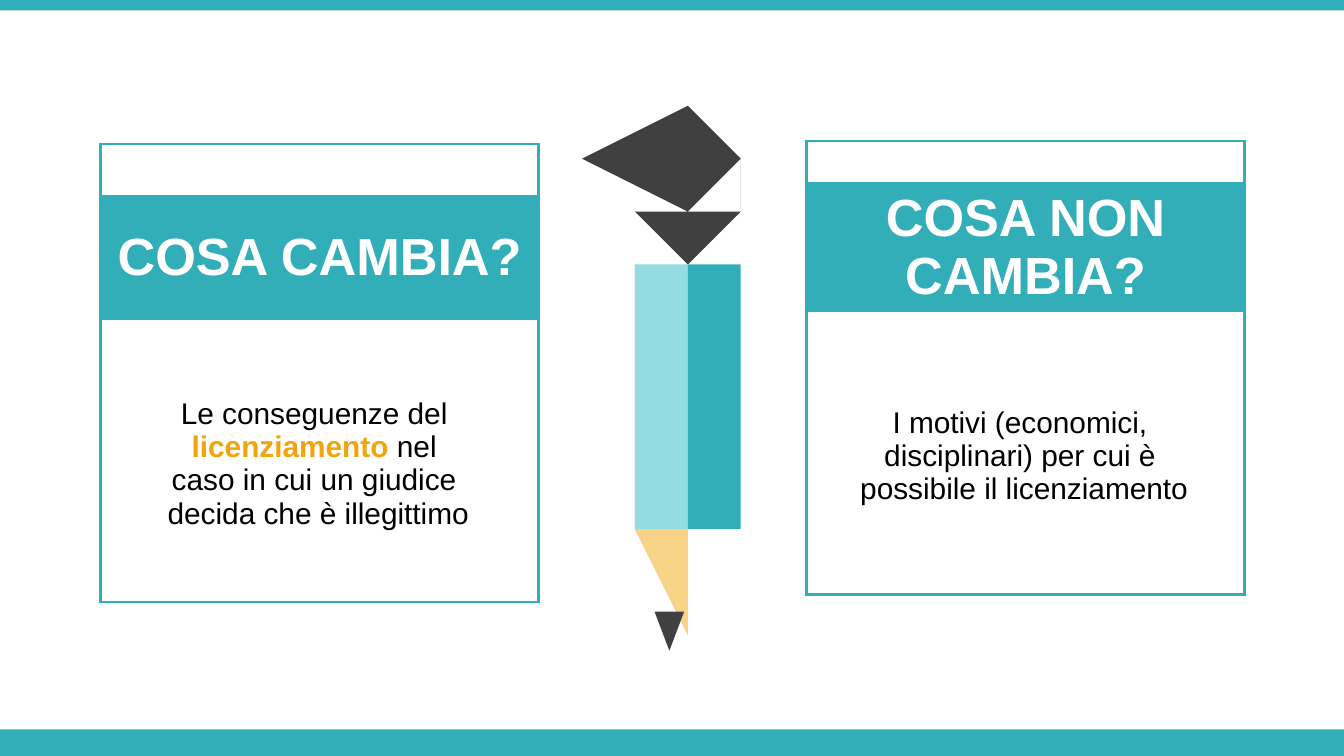
from math import cos, pi, sin

from lxml import etree
from pptx import Presentation
from pptx.dml.color import RGBColor
from pptx.enum.shapes import MSO_SHAPE
from pptx.enum.text import MSO_ANCHOR, PP_ALIGN
from pptx.oxml.ns import qn
from pptx.util import Cm, Pt

RECT, CONE = MSO_SHAPE.RECTANGLE, MSO_SHAPE.ISOSCELES_TRIANGLE
MIDDLE, CENTER = MSO_ANCHOR.MIDDLE, PP_ALIGN.CENTER

THEME = {
    "teal": "32AEB8", "aqua": "92DCE2", "pale": "BEEAED", "white": "FFFFFF",
    "black": "000000", "amber": "F2A40D", "wood": "F6BF56", "grain": "F8D286",
    "dark": "404040", "font": "Arial", "head": 28, "body": 16, "edge": 1.5,
}

# Content: lengths in cm, body lines as lists of (text, is key word)
WIDE, HIGH = 25.4, 14.29
BARS = [(0, 0.2), (13.79, 0.5)]
COLS = [0.61, 7.01, 0.66]
TAIL = [1.02, 0.91, 0.91, 1.58, 0.91]
CARDS = [
    {"at": (1.9, 2.72), "rows": [0.97, 2.36], "head": "COSA CAMBIA?",
     "body": [[("Le conseguenze del ", False)],
              [("licenziamento", True), (" nel ", False)],
              [("caso in cui un giudice ", False)],
              [("decida che è illegittimo", False)]]},
    {"at": (15.24, 2.67), "rows": [0.74, 2.46], "head": "COSA NON CAMBIA?",
     "body": [[("I motivi (economici, ", False)],
              [("disciplinari) per cui è ", False)],
              [("possibile il licenziamento", False)]]},
]

# Pencil parts: the tip, then the upper edge of each stripe
TIP = [
    ("wood", [(11.85, 9.8), (13.49, 9.83), (13.49, 10.21), (12.65, 12.22), (11.85, 10.21)]),
    ("grain", [(12.37, 9.8), (12.93, 9.8), (12.93, 10.08), (12.67, 12.22), (12.37, 10.19)]),
]
STRIPES = [
    ("pale", [(11.88, 4.52), (12.16, 4.52), (12.43, 4.7)]),
    ("aqua", [(12.43, 4.7), (12.7, 4.88), (12.98, 4.7)]),
    ("teal", [(12.98, 4.7), (13.25, 4.52), (13.53, 4.52)]),
]
FOOT = 10.11
LEAD = (12.37, 11.56, 0.56, 0.74)
BAND = [(11.81, 3.53), (12.7, 4.11), (13.59, 3.53), (13.59, 4.14), (12.7, 4.7), (11.81, 4.14)]
KNOB = (13.94, 3.83)


def color(name):
    return RGBColor.from_string(THEME[name])


def paint(shape, name):
    shape.shadow.inherit = False
    shape.fill.solid()
    shape.fill.fore_color.rgb = color(name)
    shape.line.fill.background()


def arc(mid, wide, high, start, end):
    """Points on an ellipse, angles in degrees."""
    turns = [(start + (end - start) * k / 12) * pi / 180 for k in range(13)]
    return [(mid[0] + wide * cos(t), mid[1] + high * sin(t)) for t in turns]


def outline(shapes, name, *loops):
    pen = shapes.build_freeform(*loops[0][0], scale=Cm(1))
    for i, loop in enumerate(loops):
        if i:
            pen.move_to(*loop[0])
        pen.add_line_segments(loop[1:], close=True)
    paint(pen.convert_to_shape(), name)


def write(para, text, **form):
    run = para.add_run()
    run.text = text
    run.font.color.rgb = color(form.pop("ink"))
    for key, val in form.items():
        setattr(run.font, key, val)
    para.alignment = CENTER


def border(cell, sides):
    props = cell._tc.get_or_add_tcPr()
    for i, side in enumerate("LRTB"):
        line = etree.Element(qn("a:ln" + side))
        if side in sides:
            line.set("w", str(Pt(THEME["edge"])))
            fill = etree.SubElement(line, qn("a:solidFill"))
            etree.SubElement(fill, qn("a:srgbClr"), val=THEME["teal"])
        else:
            etree.SubElement(line, qn("a:noFill"))
        props.insert(i, line)


def card(shapes, data):
    rows = data["rows"] + TAIL
    last, end = len(rows) - 1, len(COLS) - 1
    size = (sum(COLS), sum(rows))
    grid = shapes.add_table(len(rows), len(COLS), *map(Cm, data["at"] + size)).table
    for col, wide in zip(grid.columns, COLS):
        col.width = Cm(wide)
    for row, high in zip(grid.rows, rows):
        row.height = Cm(high)
    for r in (0, 1, last):
        grid.cell(r, 0).merge(grid.cell(r, end))
    grid.cell(3, 1).merge(grid.cell(5, 1))

    # Fill every cell and frame the outer edge
    for r in range(last + 1):
        for c in range(end + 1):
            cell = grid.cell(r, c)
            cell.margin_top = cell.margin_bottom = 0
            cell.vertical_anchor = MIDDLE
            cell.fill.solid()
            cell.fill.fore_color.rgb = color("teal" if r == 1 else "white")
            edges = {"L": c == 0, "R": c == end or cell.span_width > end,
                     "T": r == 0, "B": r == last}
            border(cell, [side for side, on in edges.items() if on])

    # Heading and body text
    base = {"name": THEME["font"]}
    write(grid.cell(1, 0).text_frame.paragraphs[0], data["head"],
          ink="white", size=Pt(THEME["head"]), bold=True, **base)
    frame = grid.cell(3, 1).text_frame
    for i, line in enumerate(data["body"]):
        para = frame.add_paragraph() if i else frame.paragraphs[0]
        for text, key in line:
            write(para, text, ink="amber" if key else "black",
                  size=Pt(THEME["body"]), bold=key, **base)


def pencil(shapes):
    for name, loop in TIP:
        outline(shapes, name, loop)
    for name, top in STRIPES:
        left, right = top[0][0], top[-1][0]
        mid = ((left + right) / 2, FOOT)
        foot = [(right, FOOT), *arc(mid, 0.26, 0.28, 0, -180), (left, FOOT)]
        outline(shapes, name, top + foot)
    lead = shapes.add_shape(CONE, *map(Cm, LEAD))
    lead.rotation = 180
    paint(lead, "dark")

    # Graduation cap with its tassel
    board = [(12.7, 2.01), (14.16, 2.97), (14, 3.1),
             *arc(KNOB, 0.13, 0.13, -65, 65), (14.1, 4.45), (13.77, 4.45),
             *arc(KNOB, 0.13, 0.13, 115, 245), (13.89, 3.18), (12.7, 3.96), (11.24, 2.97)]
    outline(shapes, "dark", BAND, board)


def main():
    deck = Presentation()
    deck.slide_width, deck.slide_height = Cm(WIDE), Cm(HIGH)
    slide = deck.slides.add_slide(deck.slide_layouts[6])
    for top, high in BARS:
        paint(slide.shapes.add_shape(RECT, 0, Cm(top), Cm(WIDE), Cm(high)), "teal")
    for data in CARDS:
        card(slide.shapes, data)
    pencil(slide.shapes.add_group_shape().shapes)
    deck.save("out.pptx")


if __name__ == "__main__":
    main()
